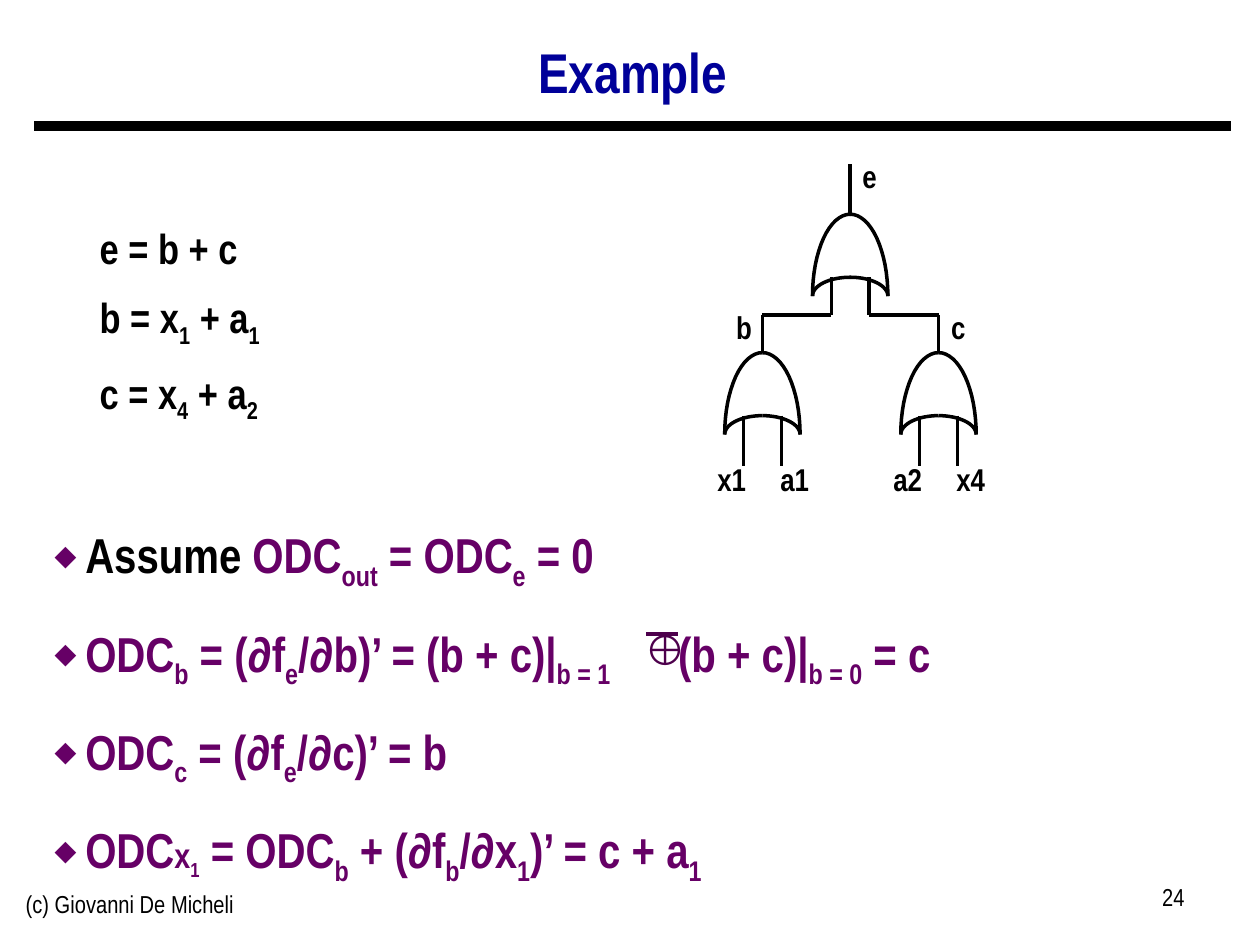
from dataclasses import dataclass
from math import cos, pi, sin

from lxml.etree import SubElement
from pptx import Presentation
from pptx.dml.color import RGBColor
from pptx.enum.text import MSO_ANCHOR, PP_ALIGN
from pptx.oxml.ns import qn
from pptx.util import Cm, Pt


@dataclass(frozen=True)
class Theme:
    font: str = "Arial Narrow"
    ink: str = "000000"
    heading: str = "000099"
    accent: str = "660066"
    operator: str = "4D004C"
    heading_size: int = 32
    bullet_size: int = 28
    equation_size: int = 24
    small_x_size: int = 20
    label_size: int = 18
    footer_size: int = 14
    rule_width: int = 6
    wire_width: int = 2


THEME = Theme()

# Content: in a list of runs, every second one is a subscript
HEADING = "Example"
COPYRIGHT = "(c) Giovanni De Micheli"
PAGE = "24"
EQUATIONS = [["e = b + c"], ["b = x", "1", " + a", "1"], ["c = x", "4", " + a", "2"]]
ASSUME = "Assume "
SMALL_X = ("x", "1")
BULLETS = [
    ["ODC", "out", " = ODC", "e", " = 0"],
    ["ODC", "b", " = (∂f", "e", "/∂b)’ = (b + c)|", "b = 1", "\t(b + c)|", "b = 0", " = c"],
    ["ODC", "c", " = (∂f", "e", "/∂c)’ = b"],
    [" = ODC", "b", " + (∂f", "b", "/∂x", "1", ")’ = c + a", "1"],
]
# Gates in cm: centre, top, output label and its offset, input labels
GATES = [
    (17.14, 4.32, "e", 0.39, ()),
    (15.37, 7.11, "b", -0.37, ("x1", "a1")),
    (18.92, 7.11, "c", 0.4, ("a2", "x4")),
]
HALF, HEIGHT, ARCH = 0.76, 1.65, 0.38
PIN = HALF / 2
TOP_Y, BUS_Y, INPUT_Y = 3.3, 6.35, 9.4
LABEL_W, LABEL_H, LABEL_RISE = 1.1, 1.02, 0.26

deck = Presentation()
deck.slide_width, deck.slide_height = Cm(25.4), Cm(19.05)
slide = deck.slides.add_slide(deck.slide_layouts[6])


def add_run(paragraph, text, size, color=THEME.ink, bold=True, sub=False):
    run = paragraph.add_run()
    run.text = text
    run.font.name, run.font.size, run.font.bold = THEME.font, Pt(size), bold
    run.font.color.rgb = RGBColor.from_string(color)
    if sub:
        run._r.get_or_add_rPr().set("baseline", "-25000")


def add_runs(paragraph, texts, size, color=THEME.ink):
    for i, text in enumerate(texts):
        add_run(paragraph, text, size, color, sub=i % 2 == 1)


def add_box(left, top, width, height, wrap=True, align=PP_ALIGN.LEFT):
    frame = slide.shapes.add_textbox(Cm(left), Cm(top), Cm(width), Cm(height)).text_frame
    frame.word_wrap = wrap
    frame.paragraphs[0].alignment = align
    return frame


def add_paragraphs(frame, count, spacing, before):
    for i in range(count):
        paragraph = frame.add_paragraph() if i else frame.paragraphs[0]
        paragraph.line_spacing = spacing
        if i:
            paragraph.space_before = Pt(before)
        yield paragraph


def add_line(x1, y1, x2, y2, width=THEME.wire_width, color=THEME.ink):
    line = slide.shapes.add_connector(1, Cm(x1), Cm(y1), Cm(x2), Cm(y2))
    line.line.width = Pt(width)
    line.line.color.rgb = RGBColor.from_string(color)
    SubElement(line._element.spPr, qn("a:effectLst"))


def add_label(text, center, top):
    frame = add_box(center - LABEL_W / 2, top, LABEL_W, LABEL_H, False, PP_ALIGN.CENTER)
    add_run(frame.paragraphs[0], text, THEME.label_size)


def add_quarter(center, base, side, rise, steps=16):
    """Draw a quarter ellipse from the outer foot up to the centre line."""
    angles = [pi / 2 * i / steps for i in range(steps + 1)]
    points = [
        (Cm(center + side * HALF * cos(a)), Cm(base - rise * sin(a))) for a in angles
    ]
    builder = slide.shapes.build_freeform(*points[0])
    builder.add_line_segments(points[1:], close=False)
    arc = builder.convert_to_shape()
    arc.shadow.inherit = False
    arc.fill.background()
    arc.line.width = Pt(THEME.wire_width)
    arc.line.color.rgb = RGBColor.from_string(THEME.ink)


def add_bullet(paragraph):
    props = paragraph._p.get_or_add_pPr()
    props.set("marL", str(Cm(0.8)))
    props.set("indent", str(-Cm(0.62)))
    SubElement(SubElement(props, qn("a:buClr")), qn("a:srgbClr")).set("val", THEME.accent)
    SubElement(props, qn("a:buSzPct")).set("val", "58000")
    SubElement(props, qn("a:buChar")).set("char", "◆")
    tab = SubElement(SubElement(props, qn("a:tabLst")), qn("a:tab"))
    tab.set("pos", str(Cm(12.75)))
    tab.set("algn", "l")


# Heading, rule and footer
add_line(0.69, 2.54, 24.82, 2.54, THEME.rule_width)
heading = add_box(0.68, 0.56, 24.16, 1.9, align=PP_ALIGN.CENTER)
heading.vertical_anchor = MSO_ANCHOR.MIDDLE
heading.paragraphs[0].line_spacing = 0.9
add_run(heading.paragraphs[0], HEADING, THEME.heading_size, THEME.heading)
for text, left, top, width, align in [
    (COPYRIGHT, 0.27, 17.79, 8.05, PP_ALIGN.LEFT),
    (PAGE, 18.21, 17.66, 5.92, PP_ALIGN.RIGHT),
]:
    footer = add_box(left, top, width, 1.32, align=align)
    add_run(footer.paragraphs[0], text, THEME.footer_size, bold=False)

# Equations
equations = add_box(1.76, 4.27, 10, 4.6)
for paragraph, texts in zip(add_paragraphs(equations, len(EQUATIONS), 1.1, 7.2), EQUATIONS):
    add_runs(paragraph, texts, THEME.equation_size)

# Bullets
bullets = add_box(0.67, 10.12, 24.16, 7.2)
for i, paragraph in enumerate(add_paragraphs(bullets, len(BULLETS), 1.25, 8.4)):
    add_bullet(paragraph)
    if i == 0:
        add_run(paragraph, ASSUME, THEME.bullet_size)
    if i == len(BULLETS) - 1:
        add_run(paragraph, "ODC", THEME.bullet_size, THEME.accent)
        add_runs(paragraph, SMALL_X, THEME.small_x_size, THEME.accent)
    add_runs(paragraph, BULLETS[i], THEME.bullet_size, THEME.accent)

# Circuit: gates with their wires and labels
root_x = GATES[0][0]
for center, top, output, offset, inputs in GATES:
    output_y, pin_y = (BUS_Y, INPUT_Y) if inputs else (TOP_Y, BUS_Y)
    add_line(center, top, center, output_y)
    add_label(output, center + offset, output_y - LABEL_RISE)
    for side in (-1, 1):
        for rise in (HEIGHT, ARCH):
            add_quarter(center, top + HEIGHT, side, rise)
        pin = center + side * PIN
        add_line(pin, top + HEIGHT - ARCH, pin, pin_y)
    for text, shift in zip(inputs, (-0.62, 0.65)):
        add_label(text, center + shift, INPUT_Y - LABEL_RISE)
    if inputs:
        add_line(center, BUS_Y, root_x + (PIN if center > root_x else -PIN), BUS_Y)

# Exclusive-or sign with a bar over it
operator = add_box(13.0, 12.57, 0.64, 1.02, align=PP_ALIGN.CENTER)
operator.margin_left = operator.margin_right = operator.margin_top = operator.margin_bottom = 0
add_run(operator.paragraphs[0], "⊕", THEME.equation_size, THEME.operator)
add_line(13.03, 12.78, 13.67, 12.78, color=THEME.operator)

deck.save("out.pptx")
